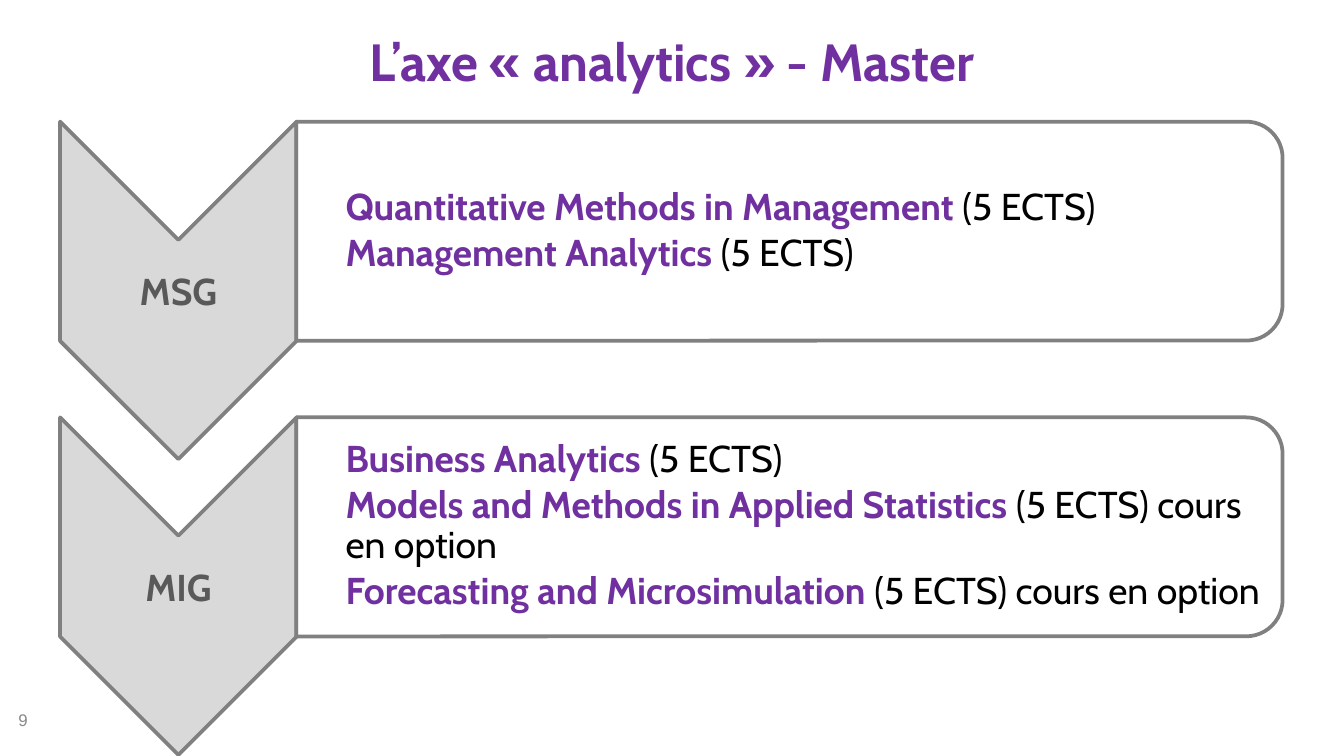
from lxml import etree
from pptx import Presentation
from pptx.dml.color import RGBColor
from pptx.enum import shapes, text
from pptx.oxml.ns import qn
from pptx.util import Cm, Pt

PURPLE, BLACK, DARK_GREY = "7030A0", "000000", "595959"
ROW_PITCH = 5.59
PROGRAMMES = [
    ("MSG", [("Quantitative Methods in Management ", "(5 ECTS)"),
             ("Management Analytics ", "(5 ECTS)")]),
    ("MIG", [("Business Analytics ", "(5 ECTS)"),
             ("Models and Methods in Applied Statistics ", "(5 ECTS) cours en option"),
             ("Forecasting and Microsimulation ", "(5 ECTS) cours en option")]),
]


def colour(value):
    return RGBColor.from_string(value)


def place(shape, left, top, width, height):
    shape.left, shape.top = Cm(left), Cm(top)
    shape.width, shape.height = Cm(width), Cm(height)


def add_text(paragraph, content, size=20, font="Cabin", fill=BLACK, bold=False):
    run = paragraph.add_run()
    run.text = content
    run.font.name, run.font.size, run.font.bold = font, Pt(size), bold
    run.font.color.rgb = colour(fill)


def prepare_frame(shape, left=0.03, right=0.03):
    frame = shape.text_frame
    frame.word_wrap = True
    frame.auto_size = text.MSO_AUTO_SIZE.NONE
    frame.vertical_anchor = text.MSO_ANCHOR.MIDDLE
    frame.margin_left, frame.margin_right = Cm(left), Cm(right)
    frame.margin_top = frame.margin_bottom = Cm(0.03)
    return frame


def add_turned_shape(slide, kind, centre_x, centre_y, width, height, fill, opacity=100):
    """Add a grey-edged shape turned by 90 degrees; width and height are before turning."""
    shape = slide.shapes.add_shape(kind, Cm(centre_x - width / 2), Cm(centre_y - height / 2),
                                   Cm(width), Cm(height))
    shape.rotation = 90
    shape.shadow.inherit = False
    shape.fill.solid()
    shape.fill.fore_color.rgb = colour(fill)
    if opacity < 100:
        fill_colour = shape._element.spPr.find(qn("a:solidFill"))[0]
        etree.SubElement(fill_colour, qn("a:alpha"), val=str(opacity * 1000))
    shape.line.color.rgb = colour("808080")
    shape.line.width = Pt(2)


def add_label(slide, content, box, align=text.PP_ALIGN.CENTER, margin=0.03, **style):
    label = slide.shapes.add_textbox(*map(Cm, box))
    paragraph = prepare_frame(label, margin, margin).paragraphs[0]
    paragraph.alignment = align
    add_text(paragraph, content, **style)


def fill_course_list(slide, placeholder, courses, top):
    place(placeholder, 5.61, top, 18.44, 3.73)
    slide.shapes._spTree.append(placeholder._element)  # in front of its panel
    frame = prepare_frame(placeholder, left=0.41)
    for index, (course, credits) in enumerate(courses):
        paragraph = frame.add_paragraph() if index else frame.paragraphs[0]
        paragraph.line_spacing = 0.9
        paragraph.space_before, paragraph.space_after = Pt(0), Pt(3)
        properties = paragraph._p.get_or_add_pPr()
        properties.set("marL", str(Cm(0.51)))
        properties.set("indent", "0")
        etree.SubElement(properties, qn("a:buNone"))
        add_text(paragraph, course, fill=PURPLE, bold=True)
        add_text(paragraph, credits)


def add_programme(slide, placeholder, name, courses, offset):
    add_turned_shape(slide, shapes.MSO_SHAPE.CHEVRON, 3.37, 5.49 + offset, 6.38, 4.47, "D9D9D9")
    add_label(slide, name, (1.14, 4.54 + offset, 4.47, 1.9), fill=DARK_GREY, bold=True)
    add_turned_shape(slide, shapes.MSO_SHAPE.ROUND_2_SAME_RECTANGLE,
                     14.92, 4.37 + offset, 4.14, 18.64, "FFFFFF", opacity=90)
    fill_course_list(slide, placeholder, courses, 2.5 + offset)


def main():
    presentation = Presentation()
    presentation.slide_width, presentation.slide_height = Cm(25.4), Cm(14.29)
    slide = presentation.slides.add_slide(presentation.slide_layouts.get_by_name("Two Content"))

    title, *course_lists = slide.placeholders
    place(title, 1.27, 0.36, 22.86, 1.57)
    heading = prepare_frame(title).paragraphs[0]
    heading.alignment = text.PP_ALIGN.CENTER
    add_text(heading, "L’axe « analytics » - Master", size=28, fill=PURPLE, bold=True)

    for row, (name, courses) in enumerate(PROGRAMMES):
        add_programme(slide, course_lists[row], name, courses, row * ROW_PITCH)

    add_label(slide, "9", (0.1, 13.23, 5.92, 0.76), align=text.PP_ALIGN.LEFT, margin=0.25,
              size=9, font="Arial", fill="898989")
    presentation.save("out.pptx")


if __name__ == "__main__":
    main()
